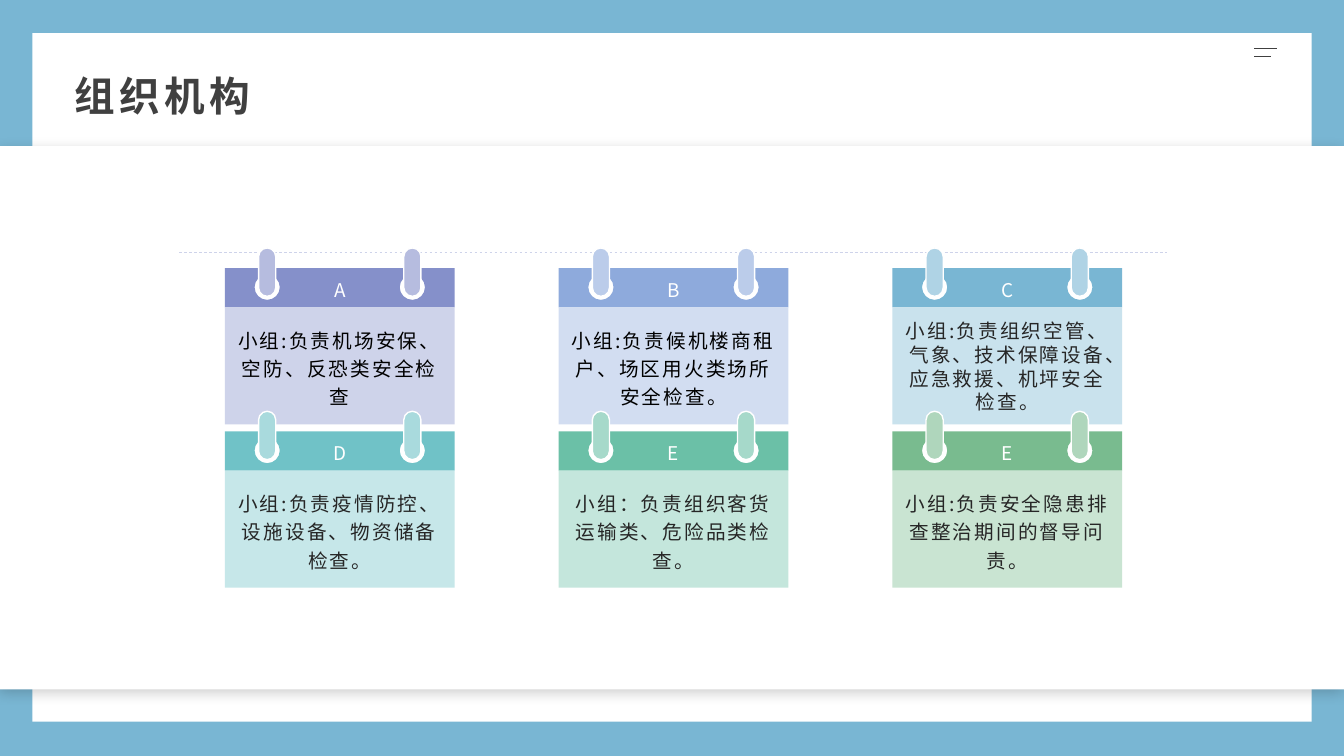
from dataclasses import dataclass

from lxml import etree
from pptx import Presentation
from pptx.dml.color import RGBColor
from pptx.enum.dml import MSO_LINE
from pptx.enum.shapes import MSO_CONNECTOR, MSO_SHAPE
from pptx.enum.text import MSO_ANCHOR, MSO_AUTO_SIZE, PP_ALIGN
from pptx.oxml.ns import qn
from pptx.util import Inches, Pt

RECTANGLE, PILL = MSO_SHAPE.RECTANGLE, MSO_SHAPE.ROUNDED_RECTANGLE
STRAIGHT, DASH = MSO_CONNECTOR.STRAIGHT, MSO_LINE.DASH
TOP, MIDDLE = MSO_ANCHOR.TOP, MSO_ANCHOR.MIDDLE
LEFT, CENTER = PP_ALIGN.LEFT, PP_ALIGN.CENTER
NO_AUTOFIT = MSO_AUTO_SIZE.NONE

FONT = "Noto Sans CJK SC"
WIDTH, HEIGHT = 13.33, 7.5
WHITE, DARK, BLUE = "FFFFFF", "404040", "79B6D3"

# Grid of notes, in inches
GRID_LEFT, GRID_TOP = 2.23, 2.66
COLUMN_STEP, ROW_STEP = 3.31, 1.62
NOTE_WIDTH, HEADER_HEIGHT, BODY_HEIGHT = 2.28, 0.39, 1.16
RING_CENTERS, RING_Y, RING_RADIUS = (0.42, 1.86), 0.19, 0.125
RING_WIDTH, RING_HEIGHT, RING_RISE = 0.17, 0.48, 0.2
TEXT_DROP, TEXT_HEIGHT = 0.42, 1.11

# Quarter arcs of a unit circle, each as two control points and an end
ARC = 0.55
QUARTERS = (
    ((1, -ARC), (ARC, -1), (0, -1)),
    ((-ARC, -1), (-1, -ARC), (-1, 0)),
    ((-1, ARC), (-ARC, 1), (0, 1)),
    ((ARC, 1), (1, ARC), (1, 0)),
)


@dataclass(frozen=True)
class Note:
    column: int
    row: int
    letter: str
    duty: str
    header: str
    body: str
    ring: str
    ink: str = "262626"
    spacing: float = 1.2

    @property
    def left(self) -> float:
        return GRID_LEFT + self.column * COLUMN_STEP

    @property
    def top(self) -> float:
        return GRID_TOP + self.row * ROW_STEP


NOTES = [
    Note(0, 0, "A", "小组:负责机场安保、空防、反恐类安全检查",
         "8590CA", "CED3EA", "B6BCDF", ink="000000"),
    Note(1, 0, "B", "小组:负责候机楼商租户、场区用火类场所安全检查。",
         "8EAADC", "D2DDF1", "BBCCEA", ink="000000"),
    Note(2, 0, "C", "小组:负责组织空管、气象、技术保障设备、应急救援、机坪安全检查。",
         BLUE, "C9E2ED", "AFD3E5", spacing=1.0),
    Note(0, 1, "D", "小组:负责疫情防控、设施设备、物资储备检查。",
         "70C2C7", "C6E7E9", "A9DADD"),
    Note(1, 1, "E", "小组：负责组织客货运输类、危险品类检查。",
         "6BC0A7", "C4E6DC", "A6D9CA"),
    Note(2, 1, "E", "小组:负责安全隐患排查整治期间的督导问责。",
         "79BB8F", "C9E4D2", "AFD6BC"),
]


def color(hex_value: str) -> RGBColor:
    return RGBColor.from_string(hex_value)


def paint(shape, fill: str, outline: str | None = None) -> None:
    shape.shadow.inherit = False
    shape.fill.solid()
    shape.fill.fore_color.rgb = color(fill)
    if outline:
        shape.line.color.rgb = color(outline)
        shape.line.width = Pt(1)
    else:
        shape.line.fill.background()


def add_block(page, kind, left: float, top: float, width: float, height: float,
              fill: str, outline: str | None = None):
    block = page.shapes.add_shape(
        kind, Inches(left), Inches(top), Inches(width), Inches(height))
    paint(block, fill, outline)
    return block


def add_line(shapes, left: float, right: float, y: float, stroke: str,
             weight: float, dash=None) -> None:
    line = shapes.add_connector(
        STRAIGHT, Inches(left), Inches(y), Inches(right), Inches(y))
    line.line.color.rgb = color(stroke)
    line.line.width = Pt(weight)
    if dash:
        line.line.dash_style = dash
    etree.SubElement(line.element.spPr, qn("a:effectLst"))


def add_soft_shadow(shape) -> None:
    effects = shape.element.spPr.find(qn("a:effectLst"))
    shadow = etree.SubElement(effects, qn("a:outerShdw"), {
        "blurRad": str(Pt(10)), "dist": str(Pt(3)), "dir": "5400000",
        "algn": "t", "rotWithShape": "0"})
    tone = etree.SubElement(shadow, qn("a:srgbClr"), val="0D0D0D")
    etree.SubElement(tone, qn("a:alpha"), val="20000")


def write(shape, text: str, size: float, ink: str, tracking: float,
          frame_format: dict, para_format: dict, bold: bool = False) -> None:
    """Fill a shape with one run; tracking is the letter gap in points."""
    frame = shape.text_frame
    para = frame.paragraphs[0]
    span = para.add_run()
    span.text = text
    span.font.color.rgb = color(ink)
    formats = (
        (frame, {"word_wrap": True, "auto_size": NO_AUTOFIT, **frame_format}),
        (para, para_format),
        (span.font, {"name": FONT, "size": Pt(size), "bold": bold}),
    )
    for target, values in formats:
        for name, value in values.items():
            setattr(target, name, value)
    properties = span._r.get_or_add_rPr()
    properties.set("lang", "zh-CN")
    properties.set("spc", str(round(tracking * 100)))
    latin = properties.find(qn("a:latin"))
    latin.addnext(properties.makeelement(qn("a:ea"), {"typeface": FONT}))


def punch_hole(outline, center: float) -> None:
    """Add a circle to a freeform's outline, which cuts it out of the fill."""
    def add_step(tag: str, points) -> None:
        step = etree.SubElement(outline, qn(tag))
        for x, y in points:
            etree.SubElement(step, qn("a:pt"), {
                "x": str(Inches(center + RING_RADIUS * x)),
                "y": str(Inches(RING_Y + RING_RADIUS * y))})

    add_step("a:moveTo", [(1, 0)])
    for quarter in QUARTERS:
        add_step("a:cubicBezTo", quarter)
    add_step("a:close", [])


def add_header(page, note: Note) -> None:
    left, top = Inches(note.left), Inches(note.top)
    right, bottom = left + Inches(NOTE_WIDTH), top + Inches(HEADER_HEIGHT)
    builder = page.shapes.build_freeform(left, top)
    builder.add_line_segments([(right, top), (right, bottom), (left, bottom)])
    header = builder.convert_to_shape()
    outline = header.element.spPr.find(".//" + qn("a:path"))
    for center in RING_CENTERS:
        punch_hole(outline, center)
    paint(header, note.header)
    write(header, note.letter, 13.5, WHITE, 1.5, {"vertical_anchor": MIDDLE},
          {"alignment": CENTER, "line_spacing": 1.2})


def add_note(page, note: Note) -> None:
    add_header(page, note)
    add_block(page, RECTANGLE, note.left, note.top + HEADER_HEIGHT,
              NOTE_WIDTH, BODY_HEIGHT, note.body)
    for center in RING_CENTERS:
        ring = add_block(page, PILL, note.left + center - RING_WIDTH / 2,
                         note.top - RING_RISE, RING_WIDTH, RING_HEIGHT,
                         note.ring, WHITE)
        ring.adjustments[0] = 0.5


def add_duty(page, note: Note) -> None:
    box = page.shapes.add_textbox(
        Inches(note.left), Inches(note.top + TEXT_DROP),
        Inches(NOTE_WIDTH), Inches(TEXT_HEIGHT))
    write(box, note.duty, 14, note.ink, 1.5, {"vertical_anchor": MIDDLE},
          {"alignment": CENTER, "line_spacing": note.spacing})


def add_title(page, text: str) -> None:
    title = page.shapes.title
    title.element.getparent().append(title.element)
    place = {"left": 0.66, "top": 0.66, "width": 12, "height": 0.62}
    for name, value in place.items():
        setattr(title, name, Inches(value))
    margins = {"margin_left": 0.08, "margin_right": 0.08,
               "margin_top": 0.04, "margin_bottom": 0.04}
    frame_format = {name: Inches(value) for name, value in margins.items()}
    write(title, text, 29, DARK, 3, {"vertical_anchor": TOP, **frame_format},
          {"alignment": LEFT, "space_after": Pt(8)}, bold=True)


def main() -> None:
    deck = Presentation()
    deck.slide_width, deck.slide_height = Inches(WIDTH), Inches(HEIGHT)
    page = deck.slides.add_slide(deck.slide_layouts[5])
    page.background.fill.solid()
    page.background.fill.fore_color.rgb = color(BLUE)

    add_block(page, RECTANGLE, 0.32, 0.33, 12.69, 6.83, WHITE)
    band = add_block(page, RECTANGLE, 0, 1.45, WIDTH, 5.39, WHITE)
    add_soft_shadow(band)
    add_title(page, "组织机构")

    menu = page.shapes.add_group_shape()
    for right, y in ((12.67, 0.48), (12.61, 0.56)):
        add_line(menu.shapes, 12.44, right, y, DARK, 1)
    add_line(page.shapes, 1.78, 11.57, 2.5, "CED3EA", 0.5, DASH)
    for draw in (add_note, add_duty):
        for note in NOTES:
            draw(page, note)
    deck.save("out.pptx")


if __name__ == "__main__":
    main()
